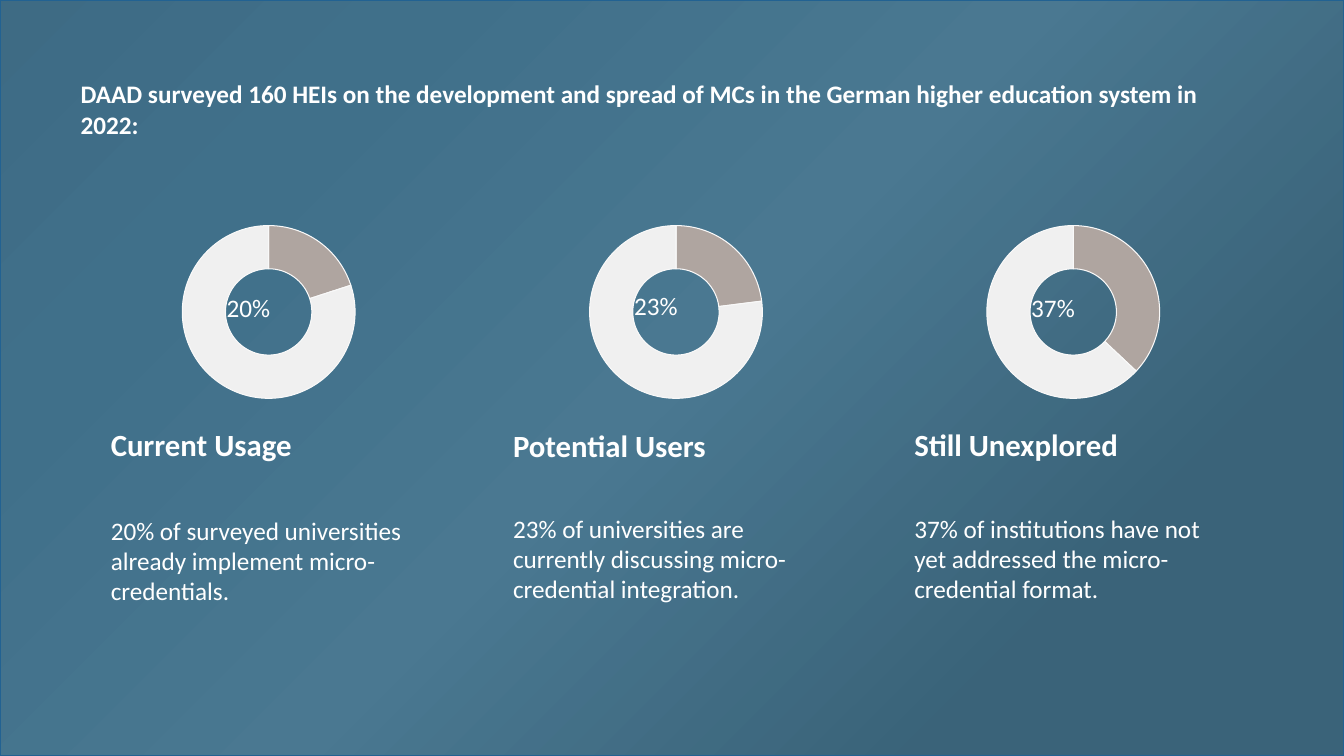
from lxml import etree
from pptx import Presentation
from pptx.chart.data import CategoryChartData
from pptx.dml.color import RGBColor
from pptx.enum.chart import XL_CHART_TYPE
from pptx.enum.shapes import MSO_SHAPE
from pptx.enum.text import MSO_ANCHOR, MSO_AUTO_SIZE, PP_ALIGN
from pptx.oxml.ns import qn
from pptx.util import Inches, Pt

DOUGHNUT = XL_CHART_TYPE.DOUGHNUT
RECTANGLE = MSO_SHAPE.RECTANGLE
MIDDLE = MSO_ANCHOR.MIDDLE
LEFT = PP_ALIGN.LEFT
GROW = MSO_AUTO_SIZE.SHAPE_TO_FIT_TEXT

FONT = "Calibri"
COLORS = {
    "text": "FFFFFF",
    "veil": "6193AD",
    "veil line": "226292",
    "share": "AFA5A0",
    "rest": "F0F0F0",
    "ring line": "F9F9F9",
    "chart text": "000000",
}
BACKGROUND_STOPS = [(0, "265068"), (21, "2A5872"), (50, "3A667E"),
                    (80, "1F4255"), (99, "1F4255")]


def write(para, text, size, bold=False):
    para.alignment = LEFT
    span = para.add_run()
    span.text = text
    span.font.name = FONT
    span.font.size = Pt(size)
    span.font.bold = bold
    span.font.color.rgb = RGBColor.from_string(COLORS["text"])


def add_text(page, left, top, width, height, text, size, bold=False):
    box = page.shapes.add_textbox(Inches(left), Inches(top), Inches(width), Inches(height))
    box.text_frame.word_wrap = True
    box.text_frame.auto_size = GROW
    write(box.text_frame.paragraphs[0], text, size, bold)


deck = Presentation()
deck.slide_width = Inches(13.33)
deck.slide_height = Inches(7.5)
page = deck.slides.add_slide(deck.slide_layouts[5])

# Diagonal gradient background
background = page.background.fill
background.gradient()
gradient = page.background._cSld.find(".//" + qn("a:gradFill"))
stops = gradient.find(qn("a:gsLst"))
for stop in list(stops):
    stops.remove(stop)
for position, color in BACKGROUND_STOPS:
    stop = etree.SubElement(stops, qn("a:gs"), pos=str(position * 1000))
    etree.SubElement(stop, qn("a:srgbClr"), val=color)
direction = gradient.find(qn("a:lin"))
direction.set("ang", str(45 * 60000))
direction.set("scaled", "0")

# Translucent veil behind everything else
veil = page.shapes.add_shape(RECTANGLE, 0, 0, deck.slide_width, deck.slide_height)
veil.shadow.inherit = False
veil.fill.solid()
veil.fill.fore_color.rgb = RGBColor.from_string(COLORS["veil"])
veil_color = veil._element.spPr.find(qn("a:solidFill"))[0]
etree.SubElement(veil_color, qn("a:alpha"), val="41000")
veil.line.color.rgb = RGBColor.from_string(COLORS["veil line"])
veil.line.width = Pt(1.5)
page.shapes._spTree.insert(2, veil._element)

# Title
title = page.shapes.title
title.left, title.top = Inches(0.7), Inches(0.44)
title.width, title.height = Inches(11.62), Inches(1.28)
title.text_frame.word_wrap = True
title.text_frame.auto_size = MSO_AUTO_SIZE.NONE
title.text_frame.vertical_anchor = MIDDLE
write(title.text_frame.paragraphs[0],
      "DAAD surveyed 160 HEIs on the development and spread of MCs in the German "
      "higher education system in 2022:", 18, True)

# One column per finding: text left, ring left, percent, label top,
# heading top, detail top, heading, detail
findings = [
    (1, 1.67, 20, 2.85, 4.17, 5.06, "Current Usage",
     "20% of surveyed universities already implement micro-credentials."),
    (4.99, 5.71, 23, 2.83, 4.18, 5.04, "Potential Users",
     "23% of universities are currently discussing micro-credential integration."),
    (8.97, 9.65, 37, 2.85, 4.17, 5.04, "Still Unexplored",
     "37% of institutions have not yet addressed the micro-credential format."),
]
for (text_left, ring_left, percent, label_top,
     heading_top, detail_top, heading, detail) in findings:
    # Ring chart
    ring_data = CategoryChartData()
    ring_data.categories = ["1", "2"]
    ring_data.add_series("Series 1", (percent, 100 - percent))
    ring = page.shapes.add_chart(DOUGHNUT, Inches(ring_left), Inches(2.1),
                                 Inches(1.99), Inches(1.99), ring_data).chart
    ring.has_legend = False
    ring.has_title = False
    ring.font.name = FONT
    ring.font.size = Pt(10)
    ring.font.color.rgb = RGBColor.from_string(COLORS["chart text"])
    plot = ring.plots[0]
    plot.vary_by_categories = True
    plot._element.find(qn("c:holeSize")).set("val", "90")
    for index, part in enumerate(("share", "rest")):
        style = plot.series[0].points[index].format
        style.fill.solid()
        style.fill.fore_color.rgb = RGBColor.from_string(COLORS[part])
        style.line.color.rgb = RGBColor.from_string(COLORS["ring line"])
        style.line.width = Pt(0.75)

    # Percentage, heading and detail
    add_text(page, ring_left + 0.48, label_top, 1, 0.4, f"{percent}%", 18)
    add_text(page, text_left, heading_top, 3.35, 0.47, heading, 22, True)
    add_text(page, text_left, detail_top, 3.35, 1.01, detail, 18)

deck.save("out.pptx")
